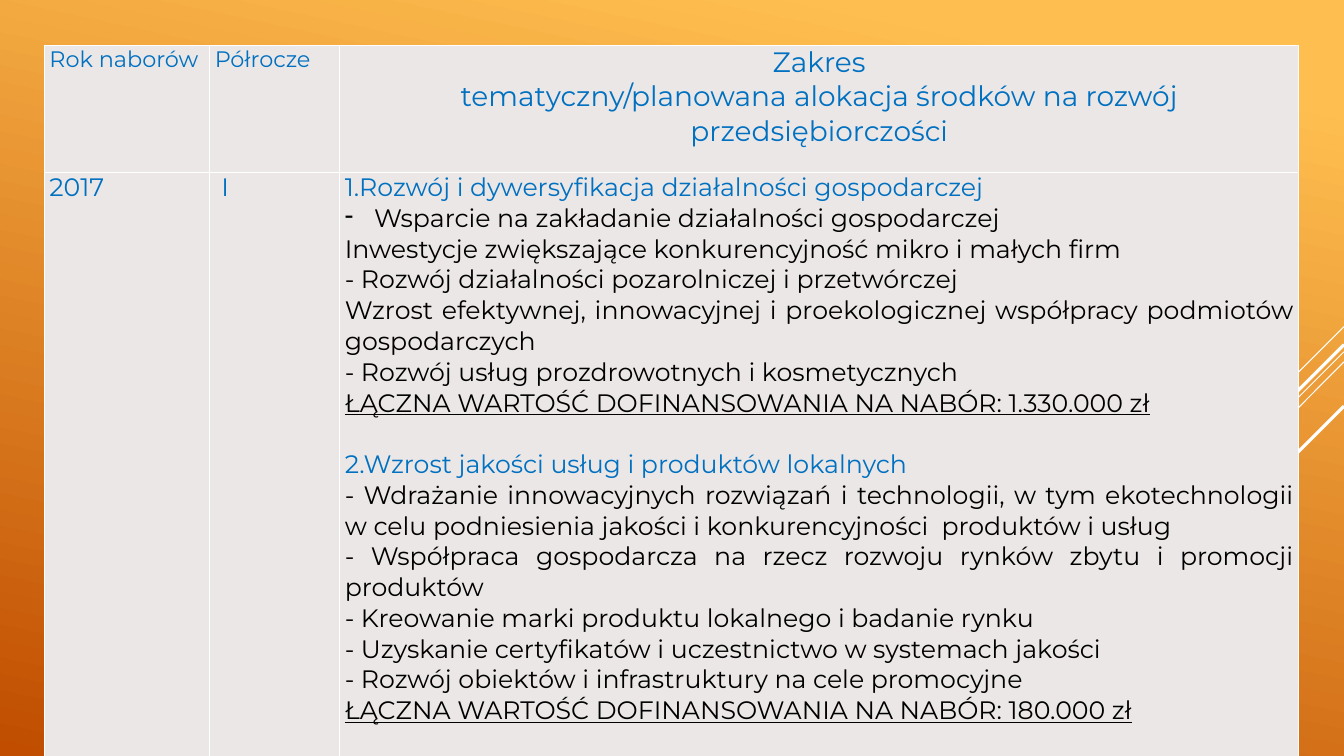
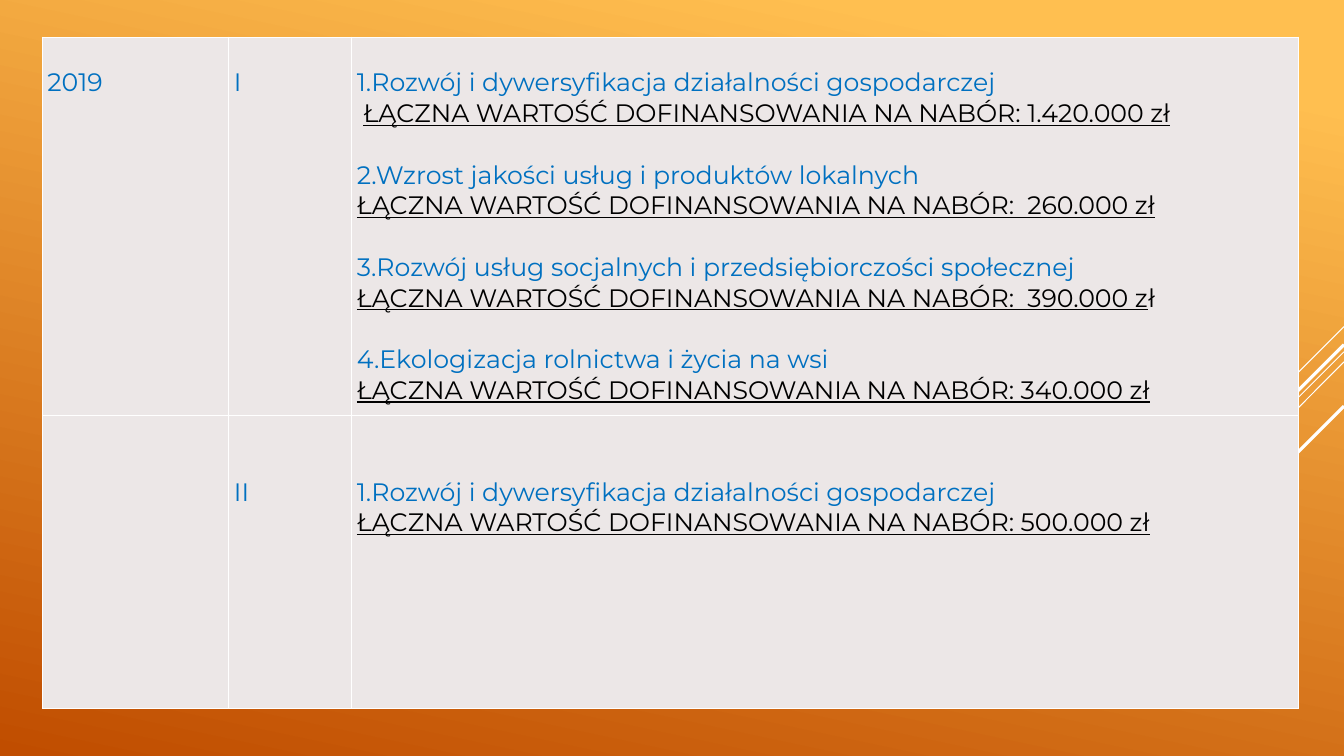
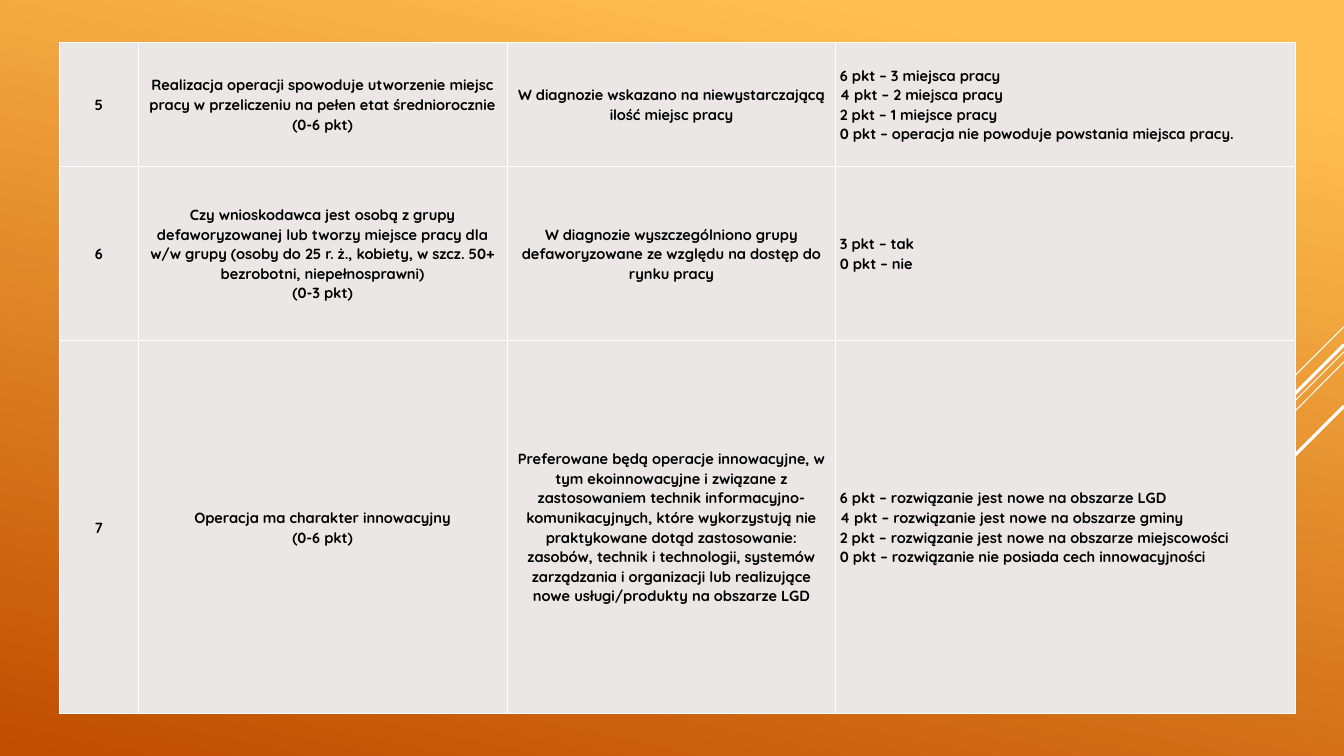
from dataclasses import dataclass

from lxml.etree import SubElement
from pptx import Presentation
from pptx.dml.color import RGBColor
from pptx.enum.text import MSO_ANCHOR as Anchor, PP_ALIGN as Align
from pptx.oxml import parse_xml
from pptx.oxml.ns import nsdecls, qn
from pptx.util import Inches, Pt


@dataclass(frozen=True)
class TextStyle:
    font: str
    size: float
    color: str
    bold: bool = False
    underline: bool = False


@dataclass(frozen=True)
class Theme:
    light: str = "FFBF50"
    dark: str = "C04D00"
    angle: int = 258
    rule: str = "FFFFFF"
    cell: str = "ECE7E7"
    border: float = 1
    gap: float = 22
    column: TextStyle = TextStyle("Montserrat", 16, "0070C0")
    scope: TextStyle = TextStyle("Montserrat", 20, "0070C0")
    heading: TextStyle = TextStyle("Montserrat", 18, "0070C0")
    body: TextStyle = TextStyle("Montserrat", 18, "000000")
    total: TextStyle = TextStyle("Montserrat", 18, "000000", underline=True)
    criterion: TextStyle = TextStyle("Quicksand", 10.5, "000000", bold=True)


@dataclass(frozen=True)
class Line:
    runs: tuple
    align: Align = Align.LEFT
    gap: bool = False
    spacing: float = 1.0
    dash_indent: float = 0


THEME = Theme()
TOTAL_LABEL = "ŁĄCZNA WARTOŚĆ DOFINANSOWANIA NA NABÓR: "
DIVERSIFICATION = "1.Rozwój i dywersyfikacja działalności gospodarczej"
QUALITY = "2.Wzrost jakości usług i produktów lokalnych"
RAYS = [
    (3.24, 12.33, 4.24, 0.75),
    (3.49, 10.07, 6.75, 0.75),
    (3.59, 11.26, 5.67, 0.75),
    (3.42, 11.42, 5.33, 2.25),
    (4.03, 11.94, 5.42, 2.25),
]


def line(text, style, **layout):
    return Line(((text, style),), **layout)


def heading(text, gap=False):
    return line(text, THEME.heading, align=Align.JUSTIFY, gap=gap)


def item(text, **layout):
    return line(text, THEME.body, align=Align.JUSTIFY, **layout)


def total(amount):
    return line(TOTAL_LABEL + amount, THEME.total, align=Align.JUSTIFY)


def criteria(align, *texts):
    return [line(text, THEME.criterion, align=align, spacing=1.07) for text in texts]


class Deck:
    """Holds the theme, the presentation and the current slide."""

    def __init__(self, theme):
        self.theme = theme
        self.presentation = Presentation()
        self.presentation.slide_width = Inches(13.33)
        self.presentation.slide_height = Inches(7.5)
        self.slide = None
        self.background()

    def background(self):
        fill = self.presentation.slide_master.background.fill
        fill.gradient()
        fill.gradient_angle = self.theme.angle
        stops = zip(fill.gradient_stops, (0.1, 1), (self.theme.light, self.theme.dark))
        for stop, position, color in stops:
            stop.position = position
            stop.color.rgb = RGBColor.from_string(color)

    def new_slide(self):
        self.slide = self.presentation.slides.add_slide(self.presentation.slide_layouts[6])
        for top, left, bottom, width in RAYS:
            self.ray(top, left, bottom, width)

    def ray(self, top, left, bottom, width):
        connector = self.slide.shapes.add_connector(
            1, Inches(13.33), Inches(top), Inches(left), Inches(bottom))
        connector.line.color.rgb = RGBColor.from_string(self.theme.rule)
        connector.line.width = Pt(width)
        SubElement(connector._element.spPr, qn("a:effectLst"))

    def table(self, left, top, columns, heights, rows, side=0.05, tops=None,
              anchor=Anchor.TOP):
        table = self.slide.shapes.add_table(
            len(heights), len(columns), Inches(left), Inches(top),
            Inches(sum(columns)), Inches(sum(heights))).table
        table.first_row = table.horz_banding = False
        for column, width in zip(table.columns, columns):
            column.width = Inches(width)
        for row, height in zip(table.rows, heights):
            row.height = Inches(height)
        for row, contents, inset in zip(table.rows, rows, tops or [0] * len(rows)):
            for cell, lines in zip(row.cells, contents):
                cell.margin_left = cell.margin_right = Inches(side)
                cell.margin_top, cell.margin_bottom = Inches(inset), 0
                cell.vertical_anchor = anchor
                self.paint(cell)
                self.add_lines(cell.text_frame, lines)

    def paint(self, cell):
        cell.fill.solid()
        cell.fill.fore_color.rgb = RGBColor.from_string(self.theme.cell)
        properties = cell._tc.get_or_add_tcPr()
        for index, edge in enumerate("LRTB"):
            properties.insert(index, parse_xml(
                f'<a:ln{edge} {nsdecls("a")} w="{Pt(self.theme.border)}"><a:solidFill>'
                f'<a:srgbClr val="{self.theme.rule}"/></a:solidFill></a:ln{edge}>'))

    def add_lines(self, frame, lines):
        for index, content in enumerate(lines):
            paragraph = frame.add_paragraph() if index else frame.paragraphs[0]
            paragraph.alignment = content.align
            paragraph.line_spacing = content.spacing
            if content.gap:
                paragraph.space_before = Pt(self.theme.gap)
            if content.dash_indent:
                self.dash(paragraph, content.dash_indent)
            for text, style in content.runs:
                self.add_run(paragraph, text, style)

    def dash(self, paragraph, indent):
        properties = paragraph._p.get_or_add_pPr()
        properties.set("marL", str(Inches(indent)))
        properties.set("indent", str(-Inches(indent)))
        SubElement(properties, qn("a:buChar")).set("char", "-")

    def add_run(self, paragraph, text, style):
        run = paragraph.add_run()
        run.text = text
        run.font.name = style.font
        run.font.size = Pt(style.size)
        run.font.bold = style.bold
        run.font.underline = style.underline
        run.font.color.rgb = RGBColor.from_string(style.color)


def calls_2017(deck):
    deck.new_slide()
    header = [
        [line("Rok naborów", THEME.column)],
        [line("Półrocze", THEME.column)],
        [line(text, THEME.scope, align=Align.CENTER) for text in (
            "Zakres",
            "tematyczny/planowana alokacja środków na rozwój przedsiębiorczości")],
    ]
    topics = [
        heading(DIVERSIFICATION),
        item("Wsparcie na zakładanie działalności gospodarczej", dash_indent=0.29),
        item("Inwestycje zwiększające konkurencyjność mikro i małych firm"),
        item("- Rozwój działalności pozarolniczej i przetwórczej"),
        item("Wzrost efektywnej, innowacyjnej i proekologicznej współpracy "
             "podmiotów gospodarczych"),
        item("- Rozwój usług prozdrowotnych i kosmetycznych"),
        total("1.330.000 zł"),
        heading(QUALITY, gap=True),
        item("- Wdrażanie innowacyjnych rozwiązań i technologii, w tym ekotechnologii "
             "w celu podniesienia jakości i konkurencyjności  produktów i usług"),
        item("- Współpraca gospodarcza na rzecz rozwoju rynków zbytu i promocji produktów"),
        item("- Kreowanie marki produktu lokalnego i badanie rynku"),
        item("- Uzyskanie certyfikatów i uczestnictwo w systemach jakości"),
        item("- Rozwój obiektów i infrastruktury na cele promocyjne"),
        total("180.000 zł"),
    ]
    year = [[line("2017", THEME.heading)], [line(" I", THEME.heading)], topics]
    deck.table(0.44, 0.45, [1.64, 1.29, 9.51], [1.26, 6.3], [header, year])


def calls_2019(deck):
    deck.new_slide()
    first_half = [
        heading(DIVERSIFICATION),
        Line(((" ", THEME.body), (TOTAL_LABEL + "1.420.000 zł", THEME.total)),
             align=Align.JUSTIFY),
        heading(QUALITY, gap=True),
        total(" 260.000 zł"),
        heading("3.Rozwój usług socjalnych i przedsiębiorczości społecznej", gap=True),
        Line(((TOTAL_LABEL + " 390.000 z", THEME.total), ("ł", THEME.body)),
             align=Align.JUSTIFY),
        heading("4.Ekologizacja rolnictwa i życia na wsi", gap=True),
        total("340.000 zł"),
    ]
    second_half = [heading(DIVERSIFICATION), total("500.000 zł")]
    rows = [
        [[line("2019", THEME.heading)], [line("I", THEME.heading)], first_half],
        [[], [line("II", THEME.heading)], second_half],
    ]
    deck.table(0.42, 0.37, [1.85, 1.22, 9.39], [3.75, 2.91], rows, tops=[0.3, 0.61])


def selection_criteria(deck):
    deck.new_slide()
    contents = [
        (["5"],
         ["Realizacja operacji spowoduje utworzenie miejsc pracy w przeliczeniu "
          "na pełen etat średniorocznie", "(0-6 pkt)"],
         ["W diagnozie wskazano na niewystarczającą ilość miejsc pracy"],
         ["6 pkt – 3 miejsca pracy", "4 pkt – 2 miejsca pracy", "2 pkt – 1 miejsce pracy",
          "0 pkt – operacja nie powoduje powstania miejsca pracy."]),
        (["6"],
         ["Czy wnioskodawca jest osobą z grupy defaworyzowanej lub tworzy miejsce pracy "
          "dla w/w grupy (osoby do 25 r. ż., kobiety, w szcz. 50+ bezrobotni, "
          "niepełnosprawni)", "(0-3 pkt)"],
         ["W diagnozie wyszczególniono grupy defaworyzowane ze względu na dostęp "
          "do rynku pracy"],
         ["3 pkt – tak", "0 pkt – nie"]),
        (["7"],
         ["Operacja ma charakter innowacyjny", "(0-6 pkt)"],
         ["Preferowane będą operacje innowacyjne, w tym ekoinnowacyjne i związane "
          "z zastosowaniem technik informacyjno-komunikacyjnych, które wykorzystują "
          "nie praktykowane dotąd zastosowanie: zasobów, technik i technologii, systemów "
          "zarządzania i organizacji lub realizujące nowe usługi/produkty na obszarze LGD"],
         ["6 pkt – rozwiązanie jest nowe na obszarze LGD",
          "4 pkt – rozwiązanie jest nowe na obszarze gminy",
          "2 pkt – rozwiązanie jest nowe na obszarze miejscowości",
          "0 pkt – rozwiązanie nie posiada cech innowacyjności"]),
    ]
    aligns = [Align.CENTER] * 3 + [Align.LEFT]
    rows = [[criteria(align, *texts) for align, texts in zip(aligns, row)]
            for row in contents]
    deck.table(0.59, 0.42, [0.78, 3.66, 3.26, 4.56], [1.23, 1.73, 3.7], rows,
               side=0.04, anchor=Anchor.MIDDLE)


def main():
    deck = Deck(THEME)
    calls_2017(deck)
    calls_2019(deck)
    selection_criteria(deck)
    deck.presentation.save("out.pptx")


if __name__ == "__main__":
    main()
